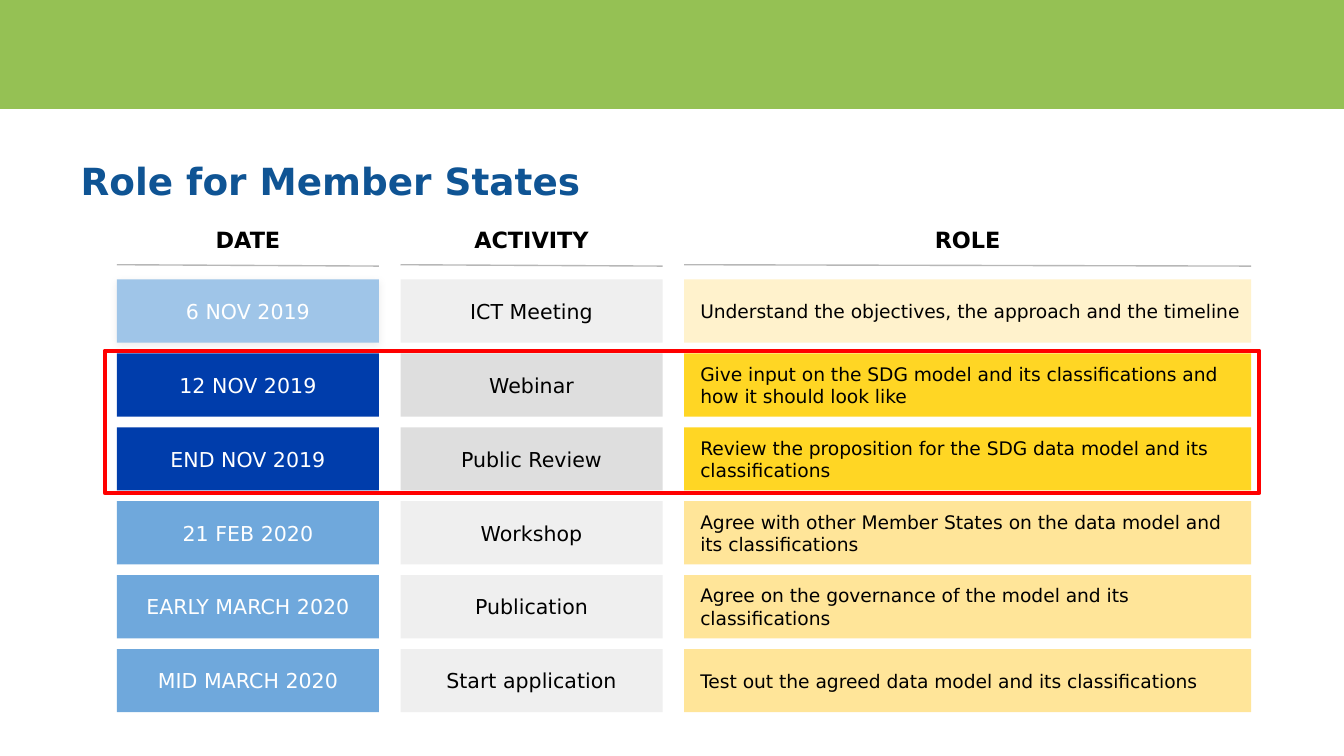
from collections import namedtuple
from dataclasses import dataclass

from lxml.etree import SubElement
from pptx import Presentation
from pptx.dml.color import RGBColor
from pptx.enum.shapes import MSO_CONNECTOR, MSO_SHAPE
from pptx.enum.text import MSO_ANCHOR, MSO_AUTO_SIZE, PP_ALIGN
from pptx.oxml.ns import qn
from pptx.util import Inches, Pt

Box = namedtuple("Box", "left top width height")


@dataclass(frozen=True)
class Theme:
    font: str = "DejaVu Sans"
    title_size: int = 20
    header_size: int = 12
    cell_size: int = 11
    role_size: int = 10
    band: str = "95C154"
    title: str = "0F5494"
    dark: str = "000000"
    light: str = "FFFFFF"
    rule: str = "B7B7B7"
    highlight: str = "FF0000"


THEME = Theme()
# Fills of the date, activity and role cells for each stage
STAGE_FILLS = {
    "past": ("9FC5E8", "EFEFEF", "FFF2CC"),
    "current": ("003DAB", "DEDEDE", "FFD624"),
    "future": ("6FA8DC", "EFEFEF", "FFE599"),
}
HEADERS = ("DATE", "ACTIVITY", "ROLE")
MILESTONES = [
    ("past", "6 NOV 2019", "ICT Meeting",
     "Understand the objectives, the approach and the timeline"),
    ("current", "12 NOV 2019", "Webinar",
     "Give input on the SDG model and its classifications and how it should look like"),
    ("current", "END NOV 2019", "Public Review",
     "Review the proposition for the SDG data model and its classifications"),
    ("future", "21 FEB 2020", "Workshop",
     "Agree with other Member States on the data model and its classifications"),
    ("future", "EARLY MARCH 2020", "Publication",
     "Agree on the governance of the model and its classifications"),
    ("future", "MID MARCH 2020", "Start application",
     "Test out the agreed data model and its classifications"),
]
COLUMN_GAP = 0.16
NARROW = 1.95
ROW_PITCH = 0.55
ROW_HEIGHT = 0.47
HEADER_HEIGHT = 0.52
RULE_OFFSET = 0.45
ROWS_OFFSET = 0.56


def rgb(code):
    return RGBColor.from_string(code)


def inches(box):
    return [Inches(length) for length in box]


def write(shape, text, size, color=THEME.dark, bold=False,
          align=PP_ALIGN.CENTER, margins=(0, 0, 0, 0)):
    frame = shape.text_frame
    frame.word_wrap = True
    frame.auto_size = MSO_AUTO_SIZE.NONE
    frame.vertical_anchor = MSO_ANCHOR.MIDDLE
    (frame.margin_left, frame.margin_top,
     frame.margin_right, frame.margin_bottom) = inches(margins)
    paragraph = frame.paragraphs[0]
    paragraph.alignment = align
    run = paragraph.add_run()
    run.text = text
    run.font.name = THEME.font
    run.font.size = Pt(size)
    run.font.bold = bold
    run.font.color.rgb = rgb(color)


def add_rectangle(slide, box, fill=None, outline=None):
    rectangle = slide.shapes.add_shape(MSO_SHAPE.RECTANGLE, *inches(box))
    rectangle.shadow.inherit = False
    if fill:
        rectangle.fill.solid()
        rectangle.fill.fore_color.rgb = rgb(fill)
    else:
        rectangle.fill.background()
    if outline:
        rectangle.line.color.rgb = rgb(outline)
        rectangle.line.width = Pt(2.25)
    else:
        rectangle.line.fill.background()
    return rectangle


def add_soft_shadow(shape):
    effects = shape.element.spPr.find(qn("a:effectLst"))
    shadow = SubElement(effects, qn("a:outerShdw"), blurRad=str(Pt(4.5)),
                        dist=str(Pt(1.5)), dir="5400000", rotWithShape="0")
    color = SubElement(shadow, qn("a:srgbClr"), val=THEME.dark)
    SubElement(color, qn("a:alpha"), val="8000")


def place_title(slide, box, text):
    title = slide.shapes.title
    title.left, title.top, title.width, title.height = inches(box)
    write(title, text, THEME.title_size, THEME.title, bold=True,
          align=PP_ALIGN.LEFT, margins=(0.1, 0.05, 0.1, 0.05))


def add_header(slide, box, text):
    header = slide.shapes.add_textbox(*inches(box))
    write(header, text, THEME.header_size, bold=True)
    rule_top = box.top + RULE_OFFSET
    rule = slide.shapes.add_connector(
        MSO_CONNECTOR.STRAIGHT, Inches(box.left), Inches(rule_top),
        Inches(box.left + box.width), Inches(rule_top + 0.01))
    rule.line.color.rgb = rgb(THEME.rule)
    rule.line.width = Pt(0.75)
    SubElement(rule.element.spPr, qn("a:effectLst"))


def add_milestone(slide, columns, top, stage, date, activity, role):
    """Draw one timeline row as a date, an activity and a role cell."""
    cells = [
        add_rectangle(slide, Box(left, top, width, ROW_HEIGHT), fill)
        for (left, width), fill in zip(columns, STAGE_FILLS[stage])
    ]
    date_cell, activity_cell, role_cell = cells
    write(date_cell, date, THEME.cell_size, THEME.light)
    write(activity_cell, activity, THEME.cell_size)
    write(role_cell, role, THEME.role_size, align=PP_ALIGN.LEFT,
          margins=(0.12, 0, 0.05, 0))
    if stage == "past":
        add_soft_shadow(date_cell)


def add_timeline(slide, box):
    pitch = NARROW + COLUMN_GAP
    columns = [(box.left, NARROW), (box.left + pitch, NARROW),
               (box.left + 2 * pitch, box.width - 2 * pitch)]
    for (left, width), text in zip(columns, HEADERS):
        add_header(slide, Box(left, box.top, width, HEADER_HEIGHT), text)

    rows_top = box.top + ROWS_OFFSET
    for index, milestone in enumerate(MILESTONES):
        add_milestone(slide, columns, rows_top + index * ROW_PITCH, *milestone)

    current = [i for i, row in enumerate(MILESTONES) if row[0] == "current"]
    frame_top = rows_top + current[0] * ROW_PITCH - 0.02
    frame_height = (len(current) - 1) * ROW_PITCH + ROW_HEIGHT + 0.04
    add_rectangle(slide, Box(box.left - 0.09, frame_top, box.width + 0.15,
                             frame_height), outline=THEME.highlight)


def main():
    deck = Presentation()
    deck.slide_width = Inches(10)
    deck.slide_height = deck.slide_width * 9 // 16
    slide = deck.slides.add_slide(deck.slide_layouts.get_by_name("Title Only"))
    add_rectangle(slide, Box(0, 0, 10, 0.81), THEME.band)
    place_title(slide, Box(0.5, 1.04, 9, 0.61), "Role for Member States")
    add_timeline(slide, Box(0.87, 1.52, 8.44, 3.78))
    deck.save("out.pptx")


if __name__ == "__main__":
    main()
